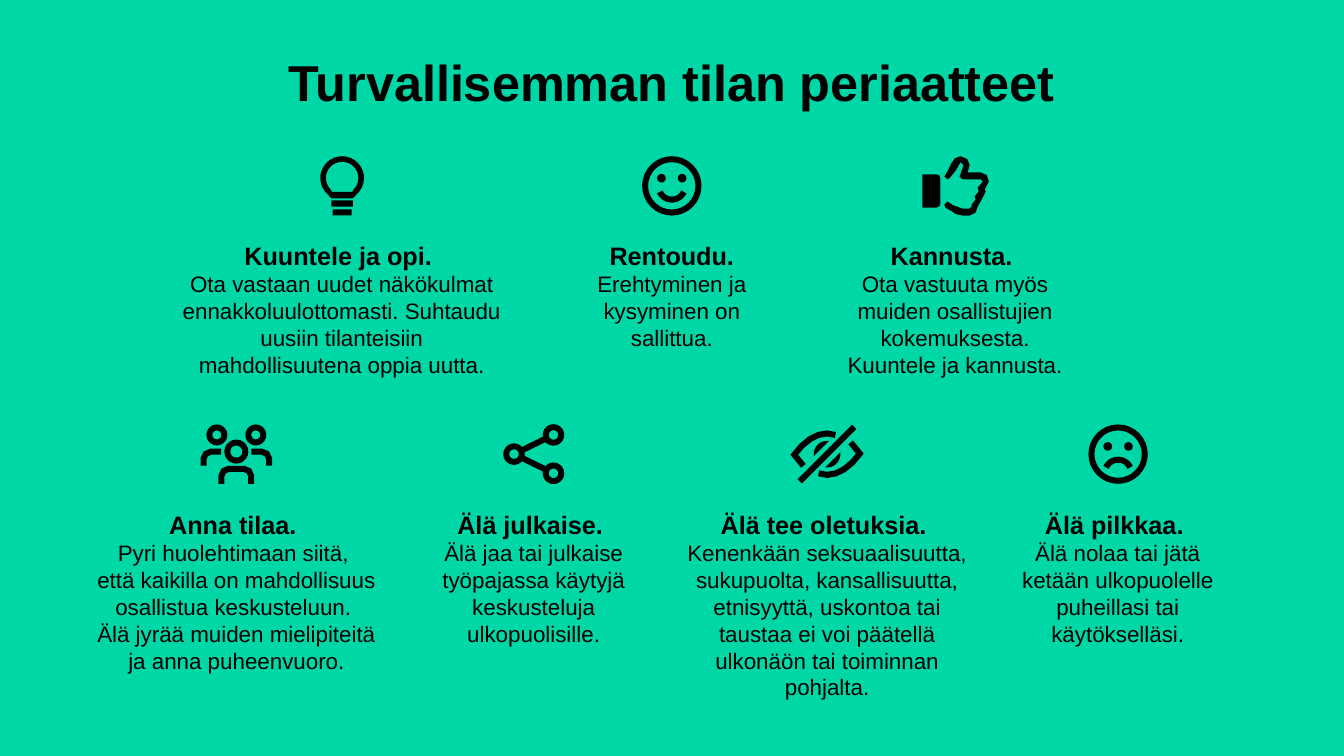
"""Build a slide of seven safer-space principles with line icons."""
import math
from dataclasses import dataclass

import pptx
import pptx.dml.color
import pptx.enum.text
import pptx.util

Pt = pptx.util.Pt
ANCHOR = pptx.enum.text.MSO_ANCHOR


@dataclass(frozen=True)
class Theme:
    background = pptx.dml.color.RGBColor.from_string("00D7A7")
    ink = pptx.dml.color.RGBColor.from_string("000000")
    font = "Arial"
    title = Pt(36)
    heading = Pt(18)
    body = Pt(16)
    stroke = 4.3


THEME = Theme()


def arc(cx, cy, radius, start, end, steps=12):
    angles = [math.radians(start + (end - start) * i / steps) for i in range(steps + 1)]
    return [(cx + radius * math.cos(a), cy + radius * math.sin(a)) for a in angles]


def disc(cx, cy, radius, steps=12):
    return arc(cx, cy, radius, 0, 360, steps)[:-1]


def ring(cx, cy, radius, steps=20):
    return [disc(cx, cy, radius, steps), disc(cx, cy, radius - THEME.stroke, steps)[::-1]]


def bar(y, w, h):
    return [(-w / 2, y - h / 2), (w / 2, y - h / 2), (w / 2, y + h / 2), (-w / 2, y + h / 2)]


def mirror(points, sx, sy):
    return [(sx * x, sy * y) for x, y in points]


def ribbon(points):
    """Return the outline of a mitred stroke along the points."""
    normals = []
    for (x1, y1), (x2, y2) in zip(points, points[1:]):
        length = math.hypot(x2 - x1, y2 - y1)
        normals.append(((y1 - y2) / length, (x2 - x1) / length))
    left, right = [], []
    for (x, y), (ax, ay), (bx, by) in zip(points, normals[:1] + normals, normals + normals[-1:]):
        scale = THEME.stroke / 2 / (1 + ax * bx + ay * by)
        dx, dy = (ax + bx) * scale, (ay + by) * scale
        left.append((x + dx, y + dy))
        right.append((x - dx, y - dy))
    return left + right[::-1]


def face(mouth):
    eyes = [disc(x, -5.5, 3.1) for x in (-7.4, 7.4)]
    return [*ring(0, 0, 21.2, 32), *eyes, ribbon(mouth)]


def smile():
    return face(arc(0, 0.3, 9.5, 25, 155))


def frown():
    return face(arc(0, 13.5, 9.5, 205, 335))


def bulb():
    outer = [(-7.6, 9), *arc(0, -5.6, 15.6, 130, 410, 24), (7.6, 9)]
    inner = [(-7.2, 4.2), *arc(0, -5.6, 11.6, 135, 405, 24), (7.2, 4.2)]
    return [outer, inner[::-1], bar(12.6, 15.3, 4.3), bar(19, 13.7, 4.3)]


def thumb():
    cuff = [(-24.1, -8.3), (-14, -8.3), (-11.9, -7.4), (-11.2, -5.4),
            (-11.2, 12.6), (-11.9, 14.6), (-14, 15.5), (-24.1, 15.5)]
    hand = [(23.4, -3.2), (22, -7.6), (17.6, -9.7), (8.3, -9.7), (9.7, -14.8),
            (8.1, -19.2), (3.2, -21.2), (-0.7, -19.8), (-3.2, -16.2), (-6.1, -10.4),
            (-8.3, -6.8), (-6.1, -4.7), (-4.7, -5.4), (0, -11.2), (3.2, -16.9),
            (5.4, -14.8), (3.2, -8.3), (2.5, -6.8), (4.7, -4.7), (17.6, -4.7),
            (19.1, -3.2), (17.6, -1.1), (15.5, 1.1), (16.2, 4), (13.3, 7.6),
            (14, 9.7), (11.2, 13.3), (11.2, 14.8), (9.7, 16.2), (4.7, 16.2),
            (-1.8, 14), (-6.1, 11.2), (-8.3, 13.3), (-7.6, 15.5), (-4, 17.6),
            (0, 20.2), (4.7, 21.2), (9.7, 21.2), (14, 19.1), (15.5, 14.8),
            (18.4, 9.7), (21.2, 4), (20.5, 2.5)]
    return [cuff, hand]


def people():
    body = [(-10.6, 21.2), (-10.6, 15.5), (-9, 12), (-5.4, 10.5),
            (5.4, 10.5), (9, 12), (10.6, 15.5), (10.6, 21.2)]
    shoulder = ribbon([(10.8, -1.8), (18, -1.8), (21.8, -0.2), (23.4, 3.2), (23.4, 8.3)])
    contours = [*ring(0, -1.8, 8.6), ribbon(body)]
    for side in (-1, 1):
        contours += [*ring(side * 13.9, -13.7, 7.5), mirror(shoulder, side, 1)]
    return contours


def share():
    contours = ring(-14, 0, 7.7)
    for side in (-1, 1):
        contours += ring(14.2, side * 13.7, 7.7)
        contours.append(ribbon([(-7.2, side * 3.3), (7.4, side * 10.4)]))
    return contours


def crossed_eye():
    lid = ribbon([(-16.9, 8.4), (-23.4, 0.4), (-18, -6), (-12, -10.9),
                  (-6, -13.8), (0, -14.8), (6, -13.7)])
    pupil = arc(0, 0, 9.5, 172, 278)
    halves = [mirror(part, side, side) for side in (1, -1) for part in (lid, pupil)]
    return [*halves, ribbon([(-19.5, 19.5), (19.5, -19.5)])]


def icon(slide, contours, cx, cy):
    """Draw all contours as one filled outline around a centre point."""
    placed = [[(Pt(cx + x), Pt(cy + y)) for x, y in points] for points in contours]
    builder = slide.shapes.build_freeform(*placed[0][0])
    for i, points in enumerate(placed):
        if i:
            builder.move_to(*points[0])
        builder.add_line_segments(points[1:], close=True)
    sp = builder.convert_to_shape()
    sp.shadow.inherit = False
    sp.fill.solid()
    sp.fill.fore_color.rgb = THEME.ink
    sp.line.fill.background()


def text_box(slide, x, y, w, h, anchor=ANCHOR.TOP):
    tf = slide.shapes.add_textbox(Pt(x), Pt(y), Pt(w), Pt(h)).text_frame
    tf.word_wrap = True
    tf.vertical_anchor = anchor
    tf.margin_left = tf.margin_right = tf.margin_top = tf.margin_bottom = 0
    p = tf.paragraphs[0]
    p.alignment = pptx.enum.text.PP_ALIGN.CENTER
    p.font.name = THEME.font
    p.font.color.rgb = THEME.ink
    return p


def title(slide, text):
    p = text_box(slide, 66, 0.7, 828, 79.2, ANCHOR.BOTTOM)
    p.font.size = THEME.title
    p.font.bold = True
    p.add_run().text = text


def principle(slide, x, y, w, h, heading, body):
    p = text_box(slide, x, y, w, h)
    p.font.size = THEME.body
    r = p.add_run()
    r.text = heading
    r.font.size = THEME.heading
    r.font.bold = True
    for i, line in enumerate(body.split("\n")):
        if i:
            p.add_line_break()
        if line:
            p.add_run().text = line


ROWS = [
    (132.8, 171.4, [
        (bulb, 244.4, 128.9, 230.4, 142.6, "Kuuntele ja opi. ",
         "\nOta vastaan uudet näkökulmat ennakkoluulottomasti. "
         "Suhtaudu uusiin tilanteisiin mahdollisuutena oppia uutta."),
        (smile, 479.9, 409, 141.8, 146.2, "Rentoudu. ", "Erehtyminen ja kysyminen on sallittua."),
        (thumb, 682.9, 596.9, 170.6, 147.6, "Kannusta. ",
         "\nOta vastuuta myös muiden osallistujien kokemuksesta. Kuuntele ja kannusta."),
    ]),
    (324.4, 363.6, [
        (people, 168.8, 64.1, 209.5, 139.7, "Anna tilaa. ",
         "\nPyri huolehtimaan siitä, \nettä kaikilla on mahdollisuus osallistua keskusteluun. "
         "\nÄlä jyrää muiden mielipiteitä ja anna puheenvuoro."),
        (share, 381.2, 293, 176.4, 139.7, "Älä julkaise. ",
         "\nÄlä jaa tai julkaise työpajassa käytyjä keskusteluja ulkopuolisille."),
        (crossed_eye, 590.8, 485.3, 211, 157.7, "Älä tee oletuksia. ",
         "\nKenenkään seksuaalisuutta, sukupuolta, kansallisuutta, etnisyyttä, "
         "uskontoa tai taustaa ei voi päätellä ulkonäön tai toiminnan pohjalta."),
        (frown, 798.7, 714.2, 168.5, 159.8, "Älä pilkkaa. ",
         "\nÄlä nolaa tai jätä ketään ulkopuolelle puheillasi tai käytökselläsi."),
    ]),
]


def main():
    prs = pptx.Presentation()
    prs.slide_width, prs.slide_height = Pt(960), Pt(540)
    slide = prs.slides.add_slide(prs.slide_layouts[6])
    slide.background.fill.solid()
    slide.background.fill.fore_color.rgb = THEME.background
    title(slide, "Turvallisemman tilan periaatteet")
    for icon_y, text_y, principles in ROWS:
        for outline, icon_x, x, w, h, heading, body in principles:
            icon(slide, outline(), icon_x, icon_y)
            principle(slide, x, text_y, w, h, heading, body)
    prs.save("out.pptx")


if __name__ == "__main__":
    main()
